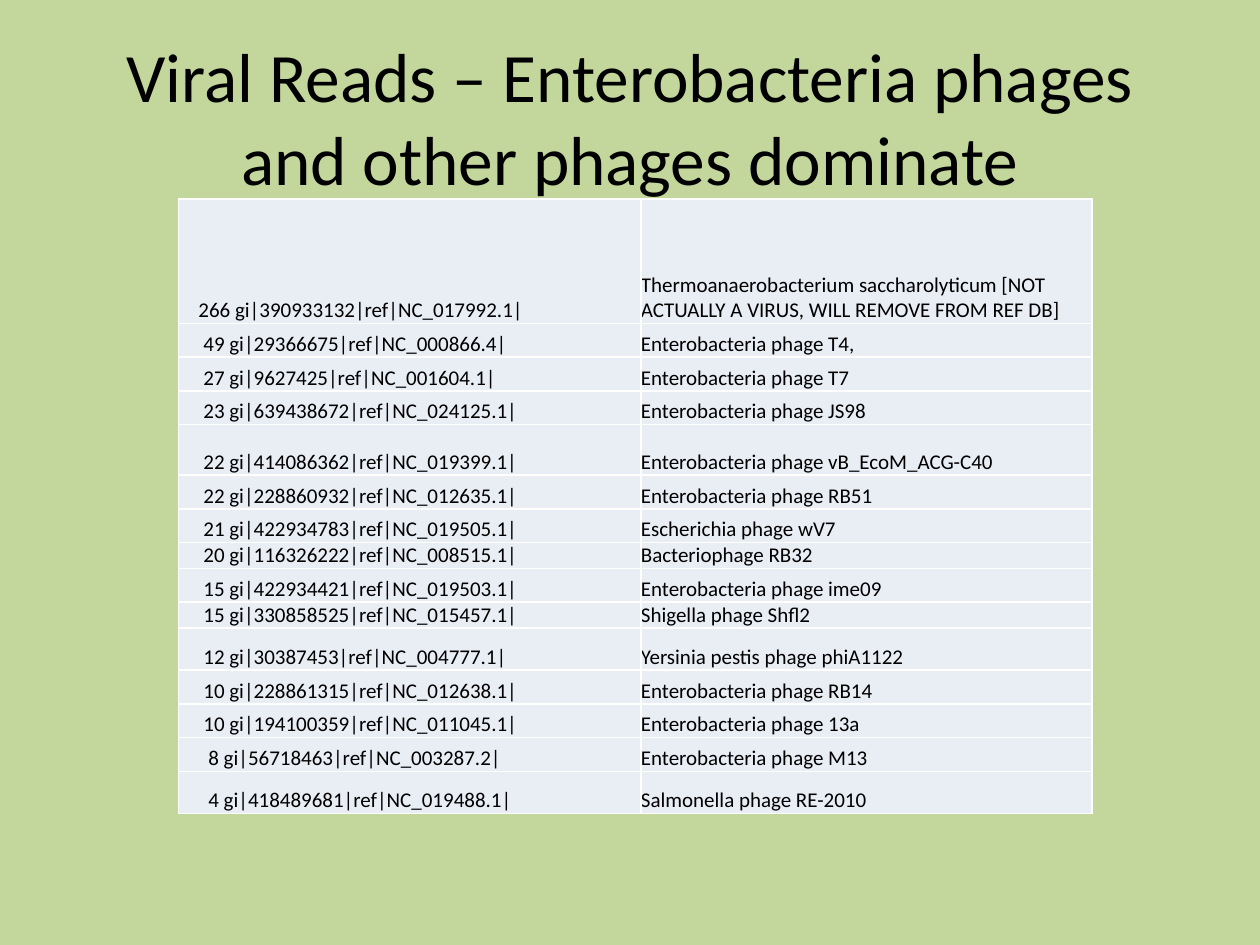
"""Build a slide that ranks viral reads by their reference genome."""
from dataclasses import dataclass

from lxml import etree
from pptx import Presentation
from pptx.dml.color import RGBColor
from pptx.enum.text import MSO_ANCHOR, PP_ALIGN
from pptx.oxml.ns import qn
from pptx.util import Cm, Pt

MIDDLE = MSO_ANCHOR.MIDDLE
BOTTOM = MSO_ANCHOR.BOTTOM
CENTER = PP_ALIGN.CENTER
BORDER_TAGS = ("a:lnL", "a:lnR", "a:lnT", "a:lnB")
BLANK_LAYOUT = 6


@dataclass(frozen=True)
class Theme:
    font: str = "Calibri"
    title_size: float = 39.6
    cell_size: float = 12
    background: str = "C3D69B"
    cell_fill: str = "E9EDF4"
    border: str = "FFFFFF"
    ink: str = "000000"


THEME = Theme()
TITLE = "Viral Reads – Enterobacteria phages and other phages dominate"
COLUMN_WIDTHS = (9.32, 9.09)
COUNT_FIELD = 7
SPACE_WIDTH = 0.1
LOW, NORMAL, RAISED, HIGH, TOP = 0.52, 0.68, 0.85, 1.02, 2.51
READS = (
    (266, "gi|390933132|ref|NC_017992.1|",
     "Thermoanaerobacterium saccharolyticum [NOT ACTUALLY A VIRUS, "
     "WILL REMOVE FROM REF DB]", TOP),
    (49, "gi|29366675|ref|NC_000866.4|", "Enterobacteria phage T4,", NORMAL),
    (27, "gi|9627425|ref|NC_001604.1|", "Enterobacteria phage T7", NORMAL),
    (23, "gi|639438672|ref|NC_024125.1|", "Enterobacteria phage JS98", NORMAL),
    (22, "gi|414086362|ref|NC_019399.1|",
     "Enterobacteria phage vB_EcoM_ACG-C40", HIGH),
    (22, "gi|228860932|ref|NC_012635.1|", "Enterobacteria phage RB51", NORMAL),
    (21, "gi|422934783|ref|NC_019505.1|", "Escherichia phage wV7", NORMAL),
    (20, "gi|116326222|ref|NC_008515.1|", "Bacteriophage RB32", LOW),
    (15, "gi|422934421|ref|NC_019503.1|", "Enterobacteria phage ime09", NORMAL),
    (15, "gi|330858525|ref|NC_015457.1|", "Shigella phage Shfl2", LOW),
    (12, "gi|30387453|ref|NC_004777.1|", "Yersinia pestis phage phiA1122", RAISED),
    (10, "gi|228861315|ref|NC_012638.1|", "Enterobacteria phage RB14", NORMAL),
    (10, "gi|194100359|ref|NC_011045.1|", "Enterobacteria phage 13a", NORMAL),
    (8, "gi|56718463|ref|NC_003287.2|", "Enterobacteria phage M13", NORMAL),
    (4, "gi|418489681|ref|NC_019488.1|", "Salmonella phage RE-2010", RAISED),
)


def write_text(paragraph, text, size):
    """Put text in a paragraph with the theme font."""
    paragraph.text = text
    paragraph.font.name = THEME.font
    paragraph.font.size = Pt(size)
    paragraph.font.color.rgb = RGBColor.from_string(THEME.ink)


def add_title(page):
    """Add the centred slide title."""
    box = page.shapes.add_textbox(Cm(1.27), Cm(0.76), Cm(22.86), Cm(3.18))
    frame = box.text_frame
    frame.word_wrap = True
    frame.vertical_anchor = MIDDLE
    paragraph = frame.paragraphs[0]
    paragraph.alignment = CENTER
    write_text(paragraph, TITLE, THEME.title_size)


def add_borders(cell):
    """Draw a thin line on all four sides of a cell."""
    properties = cell._tc.get_or_add_tcPr()
    for position, tag in enumerate(BORDER_TAGS):
        line = etree.Element(qn(tag), w=str(Pt(1)))
        fill = etree.SubElement(line, qn("a:solidFill"))
        etree.SubElement(fill, qn("a:srgbClr"), val=THEME.border)
        properties.insert(position, line)


def fill_cell(cell, text, indent=0):
    """Write and style one table cell."""
    cell.margin_left = Cm(indent)
    cell.margin_right = cell.margin_top = cell.margin_bottom = 0
    cell.vertical_anchor = BOTTOM
    cell.fill.solid()
    cell.fill.fore_color.rgb = RGBColor.from_string(THEME.cell_fill)
    add_borders(cell)
    write_text(cell.text_frame.paragraphs[0], text, THEME.cell_size)


def add_reads_table(page):
    """Add the table of read counts, references and organisms."""
    height = sum(read[-1] for read in READS)
    table = page.shapes.add_table(
        len(READS), len(COLUMN_WIDTHS), Cm(3.6), Cm(4.01),
        Cm(sum(COLUMN_WIDTHS)), Cm(height)).table
    table.first_row = False
    table.horz_banding = False
    for column, width in zip(table.columns, COLUMN_WIDTHS):
        column.width = Cm(width)
    for row, (count, reference, organism, row_height) in zip(table.rows, READS):
        row.height = Cm(row_height)
        indent = (COUNT_FIELD - len(str(count))) * SPACE_WIDTH
        fill_cell(row.cells[0], f"{count} {reference}", indent)
        fill_cell(row.cells[1], organism)


def main():
    """Create the deck and save it."""
    deck = Presentation()
    deck.slide_width, deck.slide_height = Cm(25.4), Cm(19.05)
    page = deck.slides.add_slide(deck.slide_layouts[BLANK_LAYOUT])
    page.background.fill.solid()
    page.background.fill.fore_color.rgb = RGBColor.from_string(THEME.background)
    add_title(page)
    add_reads_table(page)
    deck.save("out.pptx")


if __name__ == "__main__":
    main()
